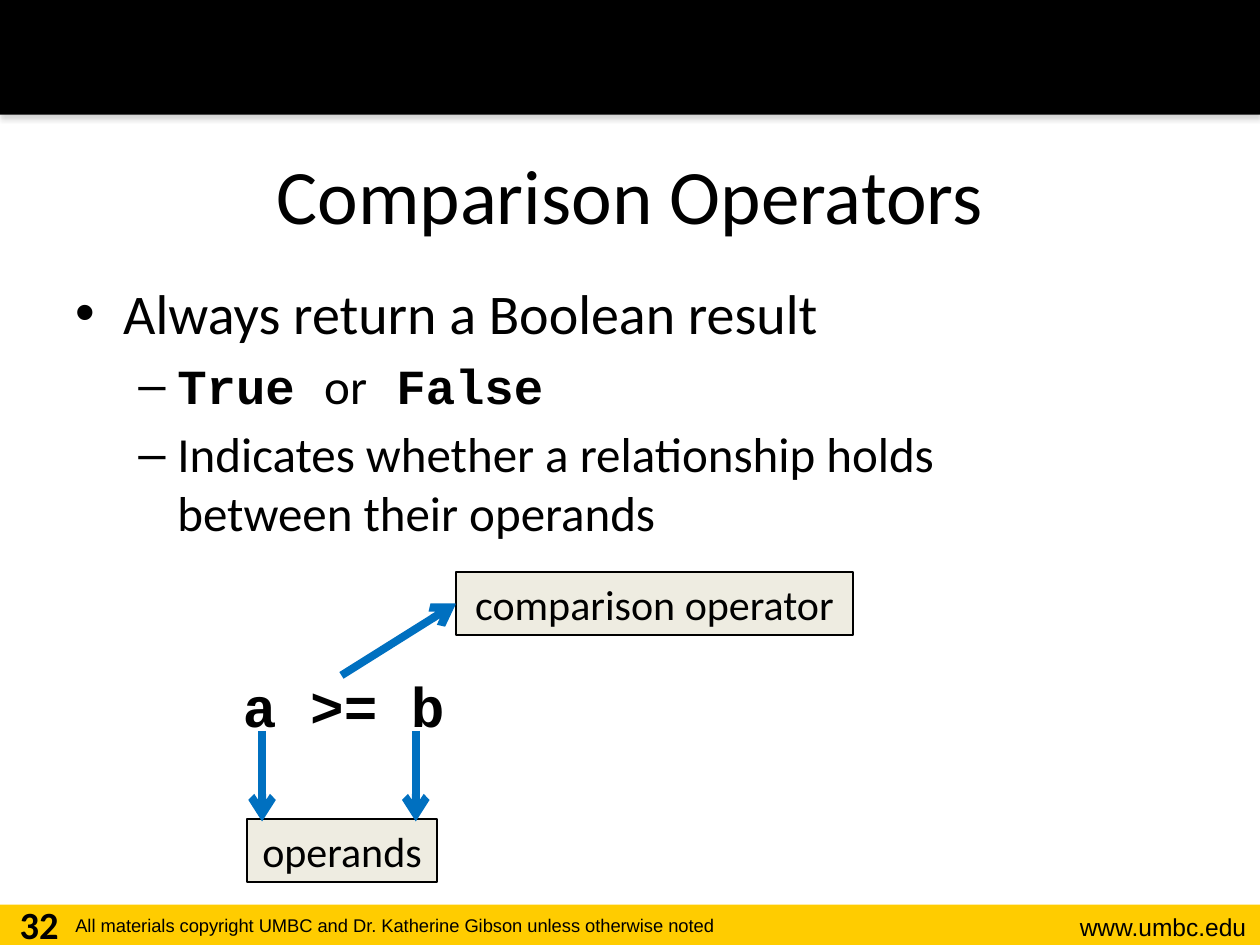
import pptx
import pptx.util
import pptx.dml.color
import pptx.enum.shapes
import pptx.enum.text
import pptx.oxml
import pptx.oxml.ns

COLORS = {"gold": "FFCC00", "black": "000000", "beige": "EEECE1", "blue": "0070C0"}
ALIGN = pptx.enum.text.PP_ALIGN
ANCHOR = pptx.enum.text.MSO_ANCHOR
SANS, CODE, SMALL = "Calibri", "Courier New", "Arial"

# Content; places are percentages of the slide: left, top, width, height
bars = {"header": (0, 0, 100, 12.13), "footer": (0, 95.73, 100, 4.27)}
labels = [  # wording, place, font, size, bold, alignment, anchor
    ("www.umbc.edu", (80, 95.87, 19.9, 4.53), SMALL, 14, False, ALIGN.RIGHT, ANCHOR.TOP),
    ("All materials copyright UMBC and Dr. Katherine Gibson unless otherwise noted",
     (5, 96.13, 65.6, 3.87), SMALL, 10.5, False, ALIGN.LEFT, ANCHOR.TOP),
    ("Comparison Operators", (5, 12.13, 90, 16.67), SANS, 44, False, ALIGN.CENTER, ANCHOR.MIDDLE),
    ("32", (0, 94.67, 6.2, 5.33), SANS, 22, True, ALIGN.CENTER, ANCHOR.TOP),
    ("a >= b", (18.3, 70.4, 18.9, 8.53), CODE, 32, True, ALIGN.LEFT, ANCHOR.TOP),
]
points_place = (5, 28.8, 90, 65.87)
points = [  # level, lines of (wording, is code) runs
    (0, [[("Always return a Boolean result", False)]]),
    (1, [[("True ", True), ("or", False), (" False", True)]]),
    (1, [[("Indicates whether a relationship holds ", False)],
         [("between their operands", False)]]),
]
levels = [  # bullet, size, left margin and hanging indent in inches
    ("•", 32, 0.38, 0.38),
    ("–", 28, 0.81, 0.31),
]
callouts = {"operands": (19.6, 86.67, 15.1, 6.67),
            "comparison operator": (36.2, 60.53, 31.5, 6.67)}
operator_start = (27.1, 71.47)
operand_columns, operand_rows = (20.8, 33), (77.33, 86.93)

prs = pptx.Presentation()
prs.slide_width, prs.slide_height = pptx.util.Inches(10), pptx.util.Inches(7.5)
slide = prs.slides.add_slide(prs.slide_layouts[6])


def color(name):
    return pptx.dml.color.RGBColor.from_string(COLORS[name])


def at(*place):
    sides = (prs.slide_width, prs.slide_height) * 2
    return [round(side * share / 100) for share, side in zip(place, sides)]


def set_font(font, face, size, bold=False):
    font.name, font.size, font.bold = face, pptx.util.Pt(size), bold
    font.color.rgb = color("black")


def add_xml(parent, xml):
    namespaces = pptx.oxml.ns.nsdecls("a")
    parent.append(pptx.oxml.parse_xml(xml.replace(" ", f" {namespaces} ", 1)))


def add_box(place, fill):
    box = slide.shapes.add_shape(pptx.enum.shapes.MSO_SHAPE.RECTANGLE, *at(*place))
    box.shadow.inherit = False
    box.fill.solid()
    box.fill.fore_color.rgb = color(fill)
    box.line.fill.background()
    return box


def write(shape, wording, face, size, bold, align, anchor):
    frame = shape.text_frame
    frame.word_wrap, frame.vertical_anchor = True, anchor
    paragraph = frame.paragraphs[0]
    paragraph.text, paragraph.alignment = wording, align
    set_font(paragraph.font, face, size, bold)


def add_arrow(start, end, target=None):
    arrow = slide.shapes.add_connector(
        pptx.enum.shapes.MSO_CONNECTOR.STRAIGHT, *at(*start, *end))
    if target is not None:
        arrow.end_connect(target, 1)
    arrow.line.color.rgb = color("blue")
    arrow.line.width = pptx.util.Pt(4.5)
    add_xml(arrow.line._get_or_add_ln(), '<a:tailEnd type="arrow"/>')
    add_xml(arrow._element.spPr, "<a:effectLst />")


# Bars, with a soft shadow under the header
add_box(bars["footer"], "gold")
header = add_box(bars["header"], "black")
add_xml(header._element.spPr.find(pptx.oxml.ns.qn("a:effectLst")),
        '<a:outerShdw blurRad="39370" dist="22860" dir="5400000" rotWithShape="0">'
        '<a:srgbClr val="808080"><a:alpha val="35000"/></a:srgbClr></a:outerShdw>')

# Title, expression and footer wording
for wording, place, *style in labels:
    write(slide.shapes.add_textbox(*at(*place)), wording, *style)

# Bulleted points
body = slide.shapes.add_textbox(*at(*points_place)).text_frame
body.word_wrap = True
for index, (level, lines) in enumerate(points):
    bullet, size, margin, hanging = levels[level]
    paragraph = body.add_paragraph() if index else body.paragraphs[0]
    paragraph.level = level
    paragraph.space_before = pptx.util.Pt(0.2 * size if index else 0)
    properties = paragraph._p.get_or_add_pPr()
    properties.set("marL", str(pptx.util.Inches(margin)))
    properties.set("indent", str(-pptx.util.Inches(hanging)))
    add_xml(properties, '<a:buFont typeface="Arial"/>')
    add_xml(properties, f'<a:buChar char="{bullet}"/>')
    set_font(paragraph.font, SANS, size)
    for number, line in enumerate(lines):
        if number:
            paragraph.add_line_break()
        for wording, is_code in line:
            run = paragraph.add_run()
            run.text = wording
            if is_code:
                set_font(run.font, CODE, size, True)

# Callouts
boxes = {}
for wording, place in callouts.items():
    boxes[wording] = box = add_box(place, "beige")
    box.line.color.rgb = color("black")
    box.line.width = pptx.util.Pt(0.75)
    write(box, wording, SANS, 24, False, ALIGN.CENTER, ANCHOR.TOP)

# Arrows from the expression to the callouts
left, top, width, height = callouts["comparison operator"]
add_arrow(operator_start, (left, top + height / 2), boxes["comparison operator"])
for column in operand_columns:
    add_arrow((column, operand_rows[0]), (column, operand_rows[1]))

prs.save("out.pptx")
